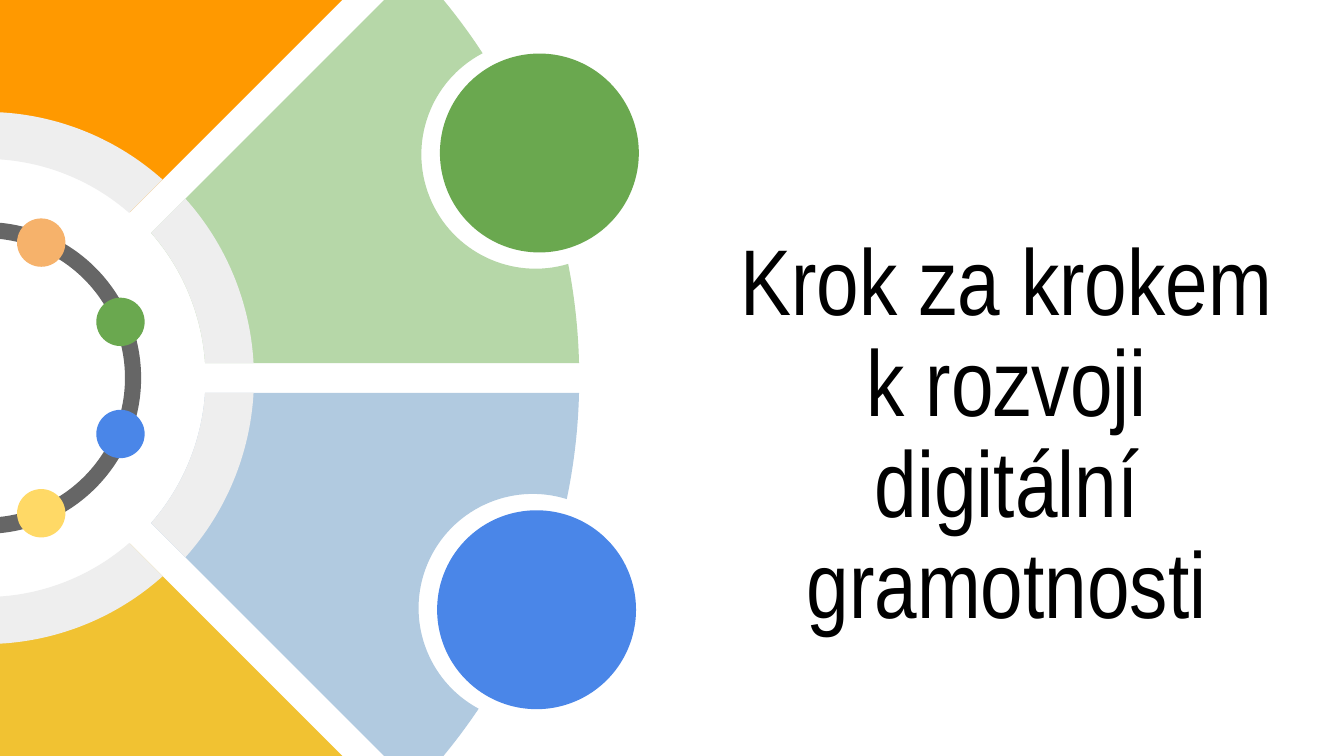
from math import acos, asin, atan2, ceil, cos, degrees, radians, sin, tan

from lxml import etree
from pptx import Presentation
from pptx.dml.color import RGBColor
from pptx.enum.shapes import MSO_SHAPE
from pptx.enum.text import MSO_ANCHOR, PP_ALIGN
from pptx.oxml.ns import qn
from pptx.util import Inches, Pt

OVAL = MSO_SHAPE.OVAL
BOTTOM = MSO_ANCHOR.BOTTOM
CENTER = PP_ALIGN.CENTER

WIDTH = Inches(10)
HEIGHT = WIDTH * 9 // 16
HUB = (Inches(-0.11), HEIGHT / 2)

# Wheel radii and half the gap between sectors, in inches
RING = (1.04, 1.16)
SPOKE = (1.1, 2.77)
PETAL = (1.64, 4.42)
NOTCH = 0.85
GAP = 0.11
DOT, DOT_RIM = 0.18, 1.09
DISC, DISC_RIM = 0.74, 4.45

# Start angle, notch angle, band radii, petal and dot colours
SECTORS = [
    (45, 67.1, (1.63, 1.98), "FF9900", "F6B26B"),
    (0, 22.1, (1.64, 2), "B6D7A8", "6AA84F"),
    (-45, -22.8, (1.64, 2), "B1CAE0", "4A86E8"),
    (-90, -67.2, (1.63, 1.98), "F1C232", "FFD966"),
]
DISCS = [(22.1, "6AA84F"), (-22.8, "4A86E8")]


def rgb(code):
    return RGBColor.from_string(code)


def polar(hub, rad, deg):
    """Point at a radius in inches and an angle counted upwards from the right."""
    turn = radians(deg)
    return hub[0] + Inches(rad) * cos(turn), hub[1] - Inches(rad) * sin(turn)


def arc(hub, rad, start, end):
    """Segments of an arc: one point for its start, then three for each curve."""
    count = ceil(abs(end - start) / 90)
    step = (end - start) / count
    pull = 4 / 3 * tan(radians(step) / 4)
    reach, lean = rad * (1 + pull ** 2) ** 0.5, degrees(atan2(pull, 1))
    parts = [[polar(hub, rad, start)]]
    for i in range(count):
        head, tail = start + i * step, start + (i + 1) * step
        parts.append([polar(hub, reach, head + lean),
                      polar(hub, reach, tail - lean), polar(hub, rad, tail)])
    return parts


def paint(shape, color):
    shape.shadow.inherit = False
    shape.fill.solid()
    shape.fill.fore_color.rgb = rgb(color)
    shape.line.fill.background()


def add_outline(slide, parts, color):
    """Closed outline in which a part of three points is a curve."""
    points = [point for part in parts for point in part]
    form = slide.shapes.build_freeform(*points[0])
    form.add_line_segments(points[1:], close=True)
    shape = form.convert_to_shape()
    lines = iter(list(shape.element.iter(qn("a:lnTo"))))
    for part in parts[1:]:
        group = [next(lines) for _ in part]
        if len(group) == 3:
            curve = etree.Element(qn("a:cubicBezTo"))
            group[0].addprevious(curve)
            for line in group:
                curve.append(line[0])
                line.getparent().remove(line)
    paint(shape, color)


def add_disc(slide, mid, rad, color):
    size = Inches(2 * rad)
    left, top = int(mid[0] - size / 2), int(mid[1] - size / 2)
    paint(slide.shapes.add_shape(OVAL, left, top, size, size), color)


def notched(hub, rad, start, end, mid):
    """Arc with a round bite whose centre lies on the rim at angle mid."""
    half = acos(1 - NOTCH ** 2 / (2 * rad ** 2))
    lean = degrees(atan2(sin(half), cos(half) - 1))
    half = degrees(half)
    bite = arc(polar(hub, rad, mid), NOTCH, mid - lean, mid + lean - 360)
    return (arc(hub, rad, start, mid - half) + bite[1:]
            + arc(hub, rad, mid + half, end)[1:])


def add_sector(slide, hub, radii, start, end, color, notch=None):
    """Ring sector whose straight sides keep a constant gap."""
    low, high = radii
    trim_in, trim_out = (degrees(asin(GAP / rad)) for rad in radii)
    inner = arc(hub, low, end - trim_in, start + trim_in)
    span = start + trim_out, end - trim_out
    if notch is None:
        outer = arc(hub, high, *span)
    else:
        outer = notched(hub, high, *span, notch)
    add_outline(slide, inner + outer, color)


def add_spoke(slide, hub, mid):
    low, high = SPOKE
    ends = [(low, -1), (high, -0.5), (high, 0.5), (low, 1)]
    add_outline(slide, [[polar(hub, rad, mid + turn / 2)] for rad, turn in ends],
                "FFFFFF")


def add_wheel(slide, hub):
    add_sector(slide, hub, RING, -90, 90, "666666")
    for start, notch, band, petal, dot in SECTORS:
        end, mid = start + 45, start + 22.5
        add_spoke(slide, hub, mid)
        add_sector(slide, hub, PETAL, start, end, petal, notch)
        add_sector(slide, hub, band, start, end, "EEEEEE")
        add_disc(slide, polar(hub, DOT_RIM, mid), DOT, dot)
    for mid, color in DISCS:
        add_disc(slide, polar(hub, DISC_RIM, mid), DISC, color)


def add_title(slide, box, lines):
    frame = slide.shapes.add_textbox(*box).text_frame
    frame.word_wrap = True
    frame.vertical_anchor = BOTTOM
    frame.margin_left = frame.margin_right = Inches(0.1)
    frame.margin_top = frame.margin_bottom = Inches(0.1)
    frame.text = "\n".join(lines)
    for para in frame.paragraphs:
        para.alignment = CENTER
        para.line_spacing = 0.9
        font = para.runs[0].font
        font.name = "Arial Narrow"
        font.size = Pt(50)
        font.color.rgb = rgb("000000")


def main():
    deck = Presentation()
    deck.slide_width, deck.slide_height = WIDTH, HEIGHT
    slide = deck.slides.add_slide(deck.slide_layouts[6])
    add_wheel(slide, HUB)
    box = [Inches(n) for n in (5.37, 3.23, 4.24, 1.62)]
    add_title(slide, box, ["Krok za krokem", "k rozvoji digitální gramotnosti"])
    deck.save("out.pptx")


if __name__ == "__main__":
    main()
